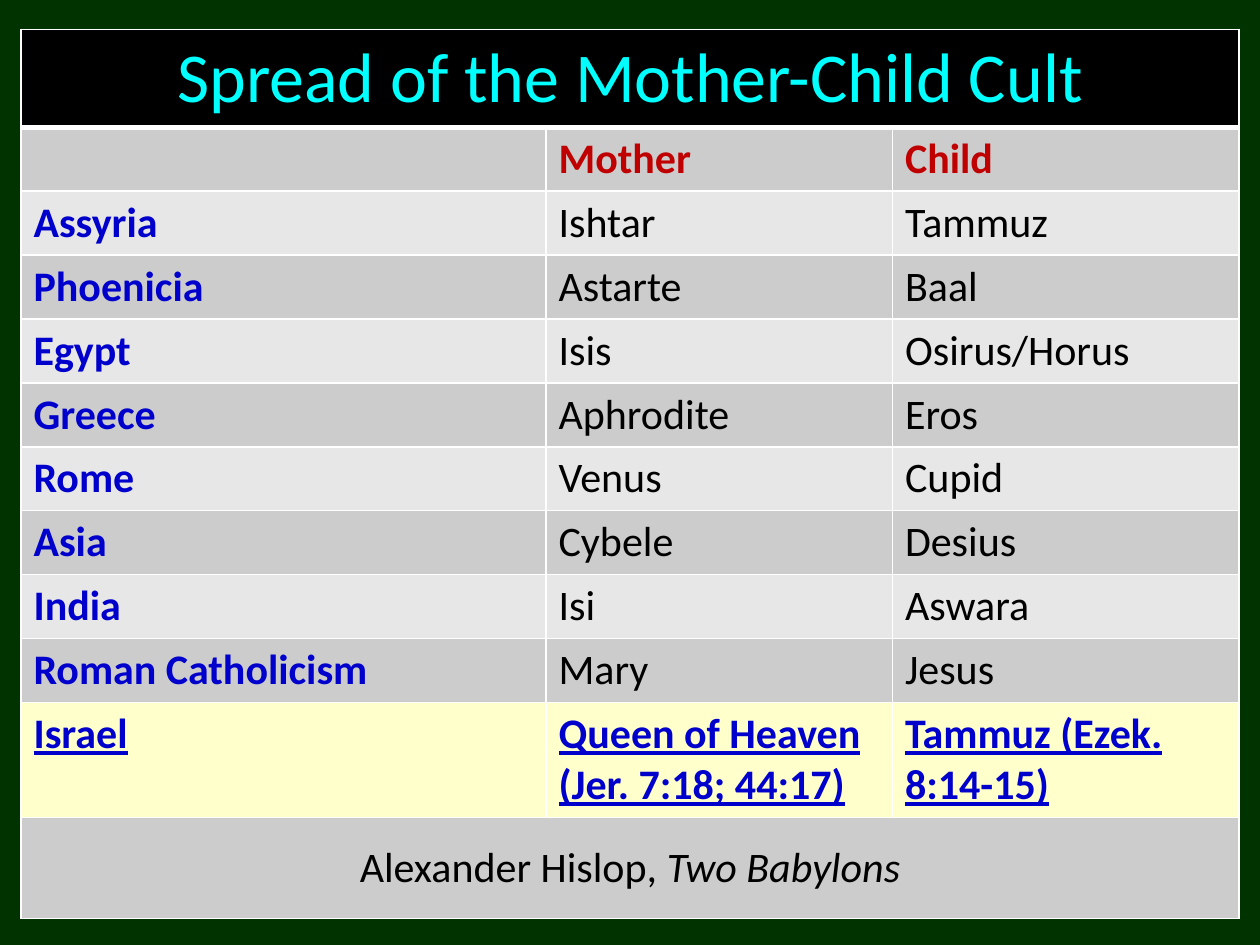
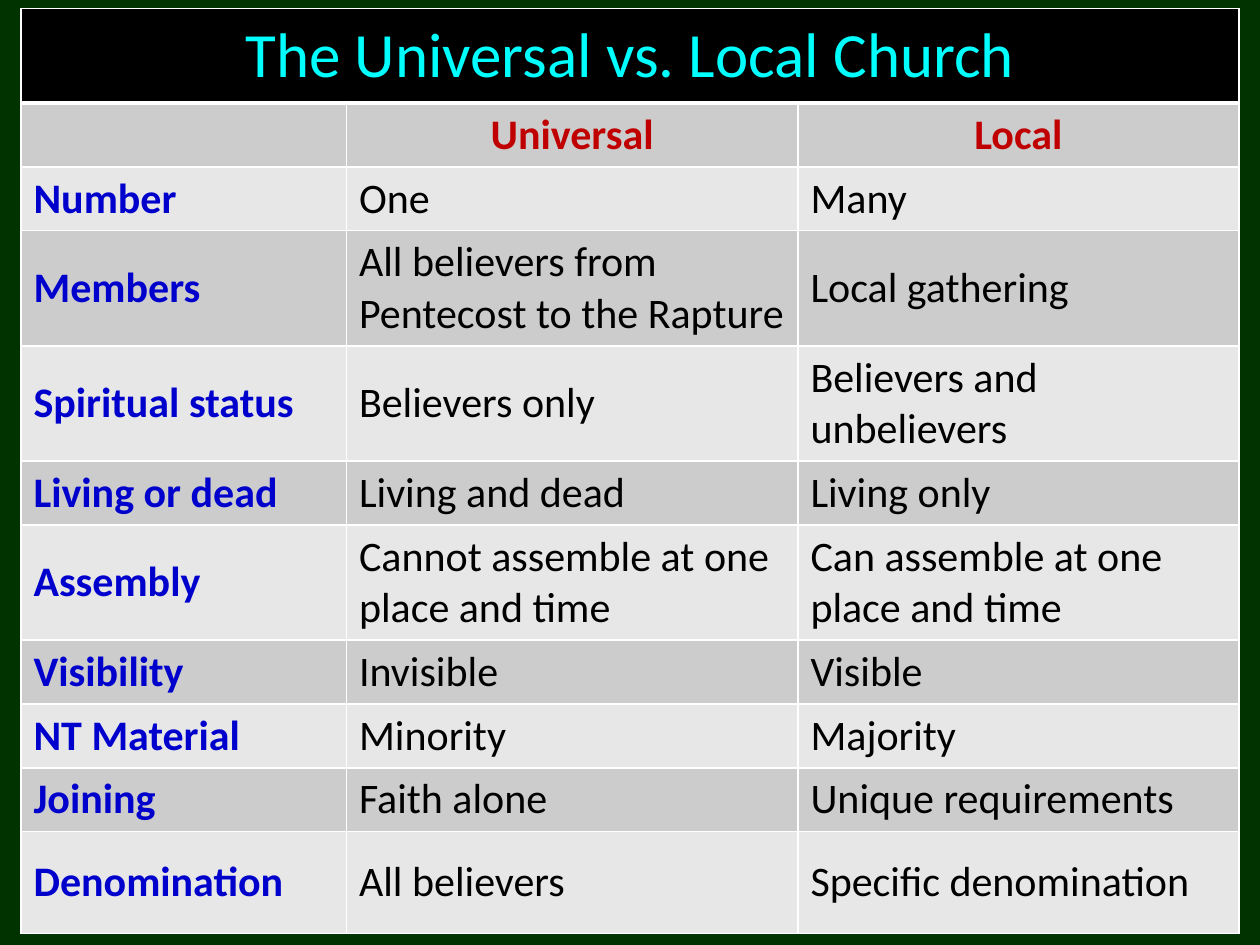
from lxml.etree import SubElement
from pptx import Presentation
from pptx.dml.color import RGBColor
from pptx.enum.text import MSO_ANCHOR, PP_ALIGN
from pptx.oxml.ns import qn
from pptx.util import Inches, Pt

COLORS = {
    "background": "003300", "title_fill": "000000", "title": "00FFFF",
    "band_dark": "CCCCCC", "band_light": "E7E7E7", "highlight": "FFFFCC",
    "header": "C00000", "label": "0000CC", "text": "000000", "border": "FFFFFF",
}
FONT = "Calibri"
GRID_COLS, GRID_ROWS = 120, 90
LEFT = 2
TITLE_ROW, TEXT_ROW = 9, 5.4

CULT_ROWS = [
    ("Assyria", "Ishtar", "Tammuz"),
    ("Phoenicia", "Astarte", "Baal"),
    ("Egypt", "Isis", "Osirus/Horus"),
    ("Greece", "Aphrodite", "Eros"),
    ("Rome", "Venus", "Cupid"),
    ("Asia", "Cybele", "Desius"),
    ("India", "Isi", "Aswara"),
    ("Roman Catholicism", "Mary", "Jesus"),
]
ISRAEL_ROW = ("Israel", "Queen of Heaven (Jer. 7:18; 44:17)", "Tammuz (Ezek. 8:14-15)")

CHURCH_ROWS = [
    ("Number", "One", "Many"),
    ("Members", "All believers from Pentecost to the Rapture", "Local gathering"),
    ("Spiritual status", "Believers only", "Believers and unbelievers"),
    ("Living or dead", "Living and dead", "Living only"),
    ("Assembly", "Cannot assemble at one place and time",
     "Can assemble at one place and time"),
    ("Visibility", "Invisible", "Visible"),
    ("NT Material", "Minority", "Majority"),
    ("Joining", "Faith alone", "Unique requirements"),
    ("Denomination", "All believers", "Specific denomination"),
]


def rgb(name):
    return RGBColor.from_string(COLORS[name])


class Deck:
    def __init__(self):
        self.prs = Presentation()
        self.prs.slide_width, self.prs.slide_height = Inches(10), Inches(7.5)
        self.slide = None

    def x(self, cols):
        return round(self.prs.slide_width * cols / GRID_COLS)

    def y(self, rows):
        return round(self.prs.slide_height * rows / GRID_ROWS)

    def add_slide(self):
        self.slide = self.prs.slides.add_slide(self.prs.slide_layouts[6])
        fill = self.slide.background.fill
        fill.solid()
        fill.fore_color.rgb = rgb("background")

    def add_table(self, top, height, widths, heights):
        """Add a bare table; rows grow beyond their heights to fit the text."""
        frame = self.slide.shapes.add_table(
            len(heights), len(widths), self.x(LEFT), self.y(top),
            self.x(sum(widths)), self.y(height))
        table = frame.table
        table.first_row = table.horz_banding = False
        for column, width in zip(table.columns, widths):
            column.width = self.x(width)
        for row, row_height in zip(table.rows, heights):
            row.height = self.y(row_height)
        frame.height = self.y(height)
        return table

    def frame_cell(self, cell, fill, bottom=1):
        """Give a cell its fill and borders, which must precede the fill in XML."""
        tcPr = cell._tc.get_or_add_tcPr()
        for side, width in (("L", 1), ("R", 1), ("T", 1), ("B", bottom)):
            line = SubElement(tcPr, qn(f"a:ln{side}"), w=str(Pt(width)))
            solid = SubElement(line, qn("a:solidFill"))
            SubElement(solid, qn("a:srgbClr"), val=COLORS["border"])
        cell.fill.solid()
        cell.fill.fore_color.rgb = rgb(fill)

    def set_text(self, cell, text, color="text", size=24, bold=False, underline=False,
                 align=PP_ALIGN.LEFT, anchor=MSO_ANCHOR.MIDDLE, italic_tail=""):
        cell.vertical_anchor = anchor
        p = cell.text_frame.paragraphs[0]
        p.alignment = align
        if not italic_tail:
            before = SubElement(p._p.get_or_add_pPr(), qn("a:spcBef"))
            SubElement(before, qn("a:spcPct"), val="20000")
        for part, italic in ((text, False), (italic_tail, True)):
            if part:
                r = p.add_run()
                r.text = part
                font = r.font
                font.name, font.size = FONT, Pt(size)
                font.bold, font.italic, font.underline = bold, italic, underline
                font.color.rgb = rgb(color)

    def merged_row(self, table, row, fill, text, bottom=1, **style):
        cells = list(table.rows[row].cells)
        for cell in cells:
            self.frame_cell(cell, fill, bottom)
        cells[0].merge(cells[-1])
        self.set_text(cells[0], text, align=PP_ALIGN.CENTER, **style)

    def title_row(self, table, text, size):
        self.merged_row(table, 0, "title_fill", text, bottom=3, color="title", size=size)

    def header_row(self, table, headings, align, anchor):
        cells = list(table.rows[1].cells)
        for cell in cells:
            self.frame_cell(cell, "band_dark")
        for cell, heading in zip(cells[1:], headings):
            self.set_text(cell, heading, "header", bold=True, align=align, anchor=anchor)

    def body_rows(self, table, rows, anchor):
        for i, row in enumerate(rows):
            for j, text in enumerate(row):
                cell = table.cell(i + 2, j)
                self.frame_cell(cell, "band_dark" if i % 2 else "band_light")
                self.set_text(cell, text, "text" if j else "label", bold=j == 0, anchor=anchor)

    def highlight_row(self, table, row, texts):
        for cell, text in zip(table.rows[row].cells, texts):
            self.frame_cell(cell, "highlight")
            self.set_text(cell, text, "label", bold=True, underline=True, anchor=MSO_ANCHOR.TOP)


def cult_slide(deck):
    deck.add_slide()
    heights = [TITLE_ROW] + [TEXT_ROW] * (len(CULT_ROWS) + 1) + [9.7, 9.6]
    table = deck.add_table(2.8, 83.6, (50, 33, 33), heights)
    deck.title_row(table, "Spread of the Mother-Child Cult", 40)
    deck.header_row(table, ("Mother", "Child"), PP_ALIGN.LEFT, MSO_ANCHOR.TOP)
    deck.body_rows(table, CULT_ROWS, MSO_ANCHOR.TOP)
    israel = len(CULT_ROWS) + 2
    deck.highlight_row(table, israel, ISRAEL_ROW)
    deck.merged_row(table, israel + 1, "band_dark", "Alexander Hislop, ",
                    italic_tail="Two Babylons")


def church_slide(deck):
    deck.add_slide()
    heights = [TITLE_ROW] + [TEXT_ROW] * len(CHURCH_ROWS) + [9.7]
    table = deck.add_table(0.8, 87.1, (31, 43, 42), heights)
    deck.title_row(table, "The Universal vs. Local Church", 36)
    deck.header_row(table, ("Universal", "Local"), PP_ALIGN.CENTER, MSO_ANCHOR.MIDDLE)
    deck.body_rows(table, CHURCH_ROWS, MSO_ANCHOR.MIDDLE)


def main():
    deck = Deck()
    cult_slide(deck)
    church_slide(deck)
    deck.prs.save("out.pptx")


if __name__ == "__main__":
    main()
